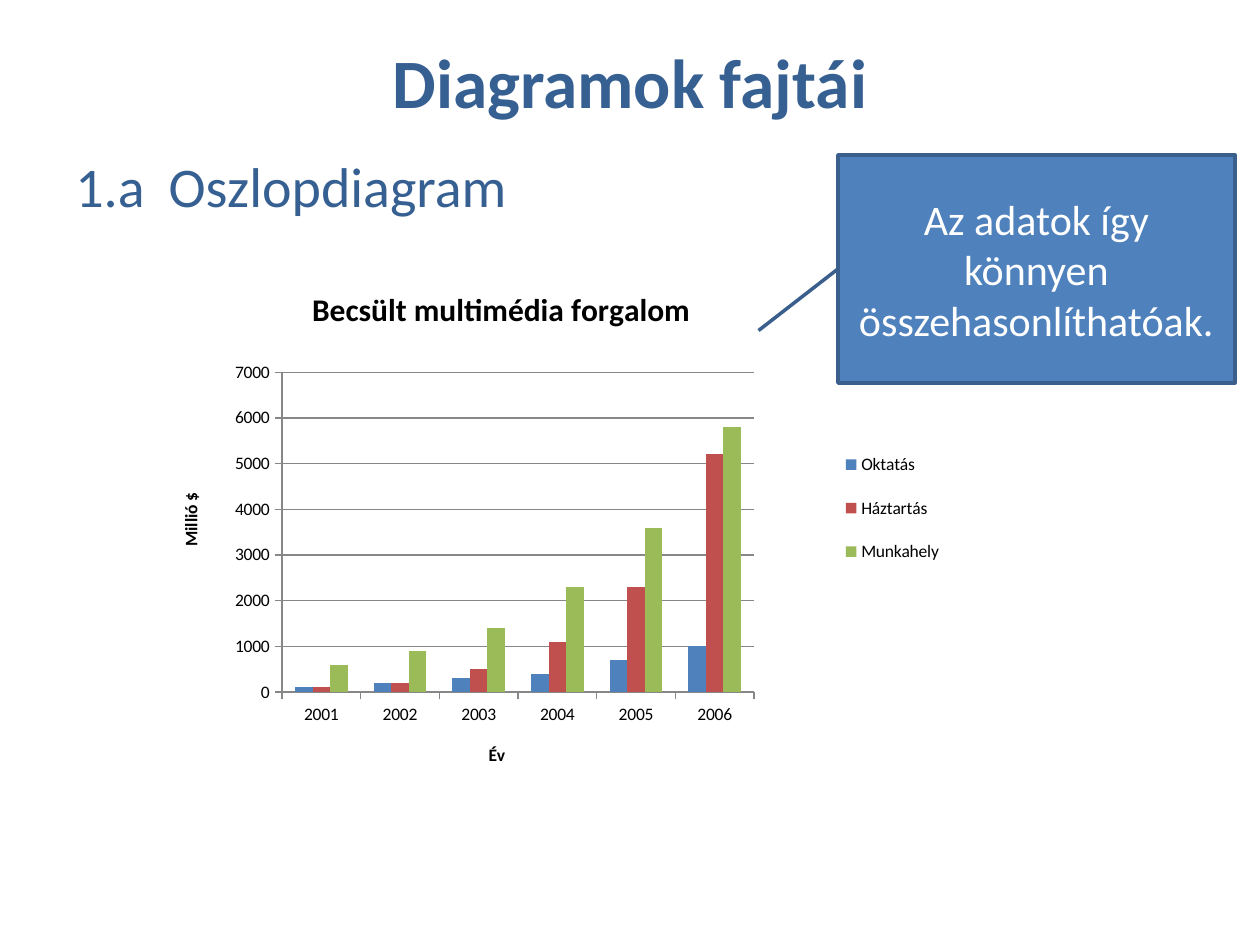
from typing import NamedTuple

from lxml import etree
from pptx import Presentation
from pptx.chart.data import CategoryChartData
from pptx.dml.color import RGBColor
from pptx.enum.chart import XL_CHART_TYPE, XL_LEGEND_POSITION, XL_TICK_MARK
from pptx.enum.shapes import MSO_SHAPE
from pptx.enum.text import MSO_ANCHOR, PP_ALIGN
from pptx.oxml.ns import qn
from pptx.util import Inches, Pt

COLUMNS = XL_CHART_TYPE.COLUMN_CLUSTERED
LEGEND_RIGHT = XL_LEGEND_POSITION.RIGHT
TICK_OUTSIDE = XL_TICK_MARK.OUTSIDE
CALLOUT = MSO_SHAPE.LINE_CALLOUT_1
MIDDLE = MSO_ANCHOR.MIDDLE
CENTER = PP_ALIGN.CENTER
LEFT = PP_ALIGN.LEFT

FONT_NAME = "Calibri"
COLORS = {
    "heading": "376092",
    "callout": "4F81BD",
    "callout_line": "3A5F8C",
    "white": "FFFFFF",
    "black": "000000",
    "grid": "878787",
}


class Series(NamedTuple):
    name: str
    values: tuple[int, ...]
    color: str


YEARS = ("2001", "2002", "2003", "2004", "2005", "2006")
SERIES = (
    Series("Oktatás", (100, 200, 300, 400, 700, 1000), "4F81BD"),
    Series("Háztartás", (100, 200, 500, 1100, 2300, 5200), "C0504D"),
    Series("Munkahely", (600, 900, 1400, 2300, 3600, 5800), "9BBB59"),
)


def set_font(font, size: float, color: str, bold: bool = False) -> None:
    font.name = FONT_NAME
    font.size = Pt(size)
    font.bold = bold
    font.color.rgb = RGBColor.from_string(COLORS[color])


def write_text(shape, text: str, size: float, color: str, alignment, bold: bool = False):
    shape.text_frame.word_wrap = True
    paragraph = shape.text_frame.paragraphs[0]
    paragraph.text = text
    paragraph.alignment = alignment
    set_font(paragraph.font, size, color, bold)
    return paragraph


def make_layout(**fractions: float):
    """Build a manual chart layout from fractions of the chart size."""
    layout = etree.Element(qn("c:layout"))
    manual = etree.SubElement(layout, qn("c:manualLayout"))
    if "w" in fractions:
        etree.SubElement(manual, qn("c:layoutTarget"), val="inner")
    for axis in ("x", "y"):
        etree.SubElement(manual, qn(f"c:{axis}Mode"), val="edge")
    for key, value in fractions.items():
        etree.SubElement(manual, qn(f"c:{key}"), val=str(value))
    return layout


def place_before_overlay(element, layout) -> None:
    for old_layout in element.findall(qn("c:layout")):
        element.remove(old_layout)
    element.find(qn("c:overlay")).addprevious(layout)


def write_chart_title(title, text: str, size: float, x: float, y: float) -> None:
    paragraph = title.text_frame.paragraphs[0]
    paragraph.text = text
    set_font(paragraph.font, size, "black", bold=True)
    place_before_overlay(title._element, make_layout(x=x, y=y))


def format_axis(axis, title: str, x: float, y: float) -> None:
    axis.major_tick_mark = TICK_OUTSIDE
    format_line(axis.format.line)
    write_chart_title(axis.axis_title, title, 10, x, y)


def format_line(line) -> None:
    line.color.rgb = RGBColor.from_string(COLORS["grid"])
    line.width = Pt(0.75)


def add_column_chart(slide) -> None:
    data = CategoryChartData()
    data.categories = YEARS
    for series in SERIES:
        data.add_series(series.name, series.values)
    frame = slide.shapes.add_chart(
        COLUMNS, Inches(1.14), Inches(1.94), Inches(6.46), Inches(4.23), data
    )
    chart = frame.chart
    set_font(chart.font, 10, "black")

    # Columns
    plot = chart.plots[0]
    plot.gap_width = 150
    plot.overlap = 0
    plot.vary_by_categories = False
    for drawn, series in zip(plot.series, SERIES):
        drawn.format.fill.solid()
        drawn.format.fill.fore_color.rgb = RGBColor.from_string(series.color)

    # Titles and axes
    write_chart_title(chart.chart_title, "Becsült multimédia forgalom", 18, 0.2, 0.07)
    chart.chart_title._element.find(qn("c:overlay")).set("val", "1")
    format_axis(chart.category_axis, "Év", 0.42, 0.93)
    format_axis(chart.value_axis, "Millió $", 0.04, 0.46)
    chart.value_axis.minimum_scale = 0
    chart.value_axis.maximum_scale = 7000
    chart.value_axis.major_unit = 1000
    chart.value_axis.has_major_gridlines = True
    format_line(chart.value_axis.major_gridlines.format.line)

    # Legend and plot area
    chart.has_legend = True
    chart.legend.position = LEGEND_RIGHT
    chart.legend.include_in_layout = False
    legend_layout = make_layout(x=0.84, y=0.35, w=0.16, h=0.29)
    legend_layout[0].remove(legend_layout[0][0])
    place_before_overlay(chart.legend._element, legend_layout)
    plot_area = chart._chartSpace.chart.plotArea
    for old_layout in plot_area.findall(qn("c:layout")):
        plot_area.remove(old_layout)
    plot_area.insert(0, make_layout(x=0.17, y=0.24, w=0.58, h=0.6))


def add_heading(slide) -> None:
    box = slide.shapes.add_textbox(Inches(0.5), Inches(1.15), Inches(9), Inches(0.7))
    paragraph = box.text_frame.paragraphs[0]
    tab_list = etree.SubElement(paragraph._p.get_or_add_pPr(), qn("a:tabLst"))
    etree.SubElement(tab_list, qn("a:tab"), pos=str(Inches(0.74)), algn="l")
    write_text(box, "1.a\tOszlopdiagram", 32, "heading", LEFT)


def add_callout(slide) -> None:
    callout = slide.shapes.add_shape(
        CALLOUT, Inches(6.65), Inches(1.23), Inches(3.15), Inches(1.81)
    )
    for index, value in enumerate((0.5, 0, 0.77, -0.2)):
        callout.adjustments[index] = value
    callout.shadow.inherit = False
    callout.fill.solid()
    callout.fill.fore_color.rgb = RGBColor.from_string(COLORS["callout"])
    callout.line.color.rgb = RGBColor.from_string(COLORS["callout_line"])
    callout.line.width = Pt(2)
    callout.text_frame.vertical_anchor = MIDDLE
    write_text(callout, "Az adatok így könnyen összehasonlíthatóak.", 24, "white", CENTER)


def main() -> None:
    presentation = Presentation()
    presentation.slide_width = Inches(10)
    presentation.slide_height = Inches(7.5)
    slide = presentation.slides.add_slide(presentation.slide_layouts[5])

    # Title
    title = slide.shapes.title
    title.left, title.top = Inches(0.5), Inches(0.3)
    title.width, title.height = Inches(9), Inches(0.69)
    title.text_frame.vertical_anchor = MIDDLE
    write_text(title, "Diagramok fajtái", 39.6, "heading", CENTER, bold=True)

    add_heading(slide)
    add_column_chart(slide)
    add_callout(slide)
    presentation.save("out.pptx")


if __name__ == "__main__":
    main()
